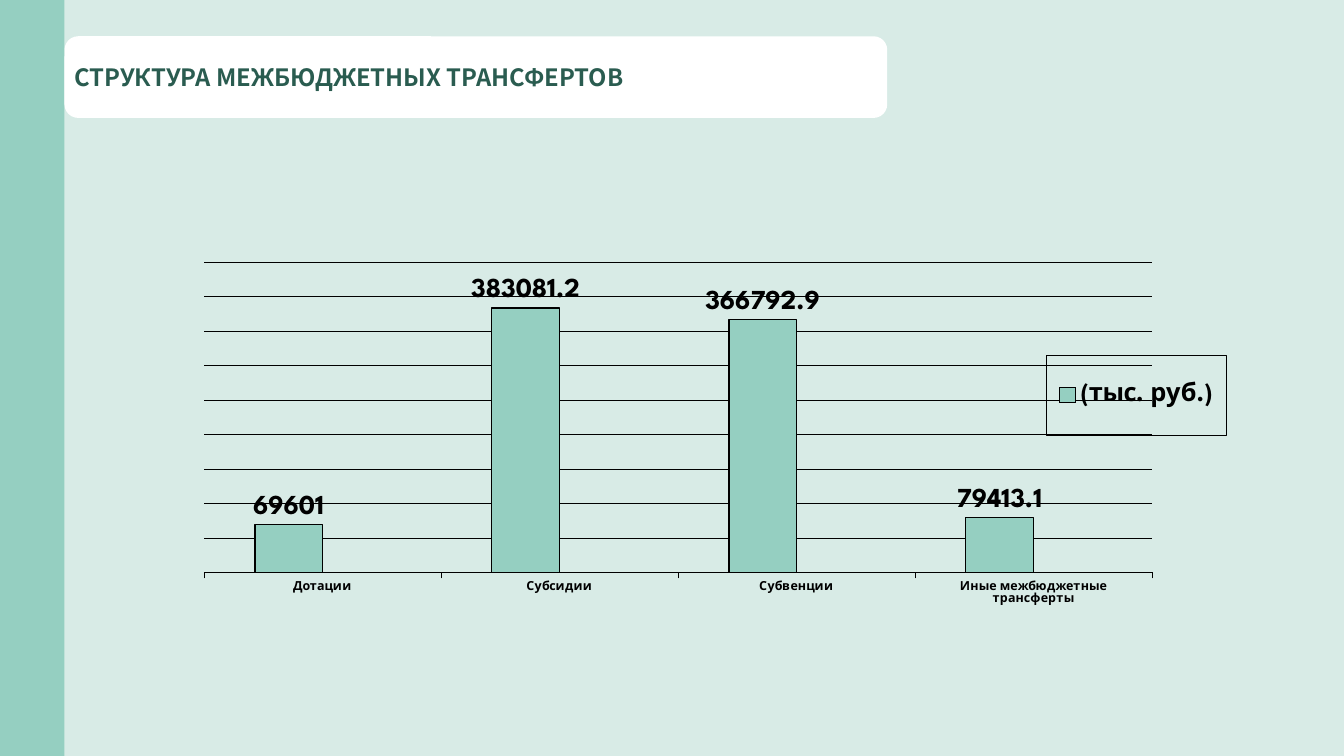
from lxml.etree import fromstring
from pptx import Presentation
from pptx.chart.data import CategoryChartData
from pptx.dml.color import RGBColor
from pptx.enum.chart import XL_CHART_TYPE, XL_LABEL_POSITION, XL_LEGEND_POSITION, XL_TICK_LABEL_POSITION, XL_TICK_MARK
from pptx.enum.shapes import MSO_SHAPE
from pptx.enum.text import MSO_ANCHOR, MSO_AUTO_SIZE, PP_ALIGN
from pptx.oxml.ns import nsdecls, qn
from pptx.util import Inches, Pt

COLORS = {"back": "D8EBE6", "panel": "FFFFFF", "mint": "95CFC1", "title": "2A5C50", "ink": "000000", "spare": "ED7D31"}
INK = RGBColor.from_string(COLORS["ink"])


def style(font, face, size, color):
    font.name = face
    font.size = Pt(size)
    font.bold = True
    font.color.rgb = RGBColor.from_string(COLORS[color])


def layout(x, y, w, h, target=""):
    return fromstring(
        f'<c:layout {nsdecls("c")}><c:manualLayout>{target}'
        '<c:xMode val="edge"/><c:yMode val="edge"/>'
        f'<c:x val="{x}"/><c:y val="{y}"/><c:w val="{w}"/><c:h val="{h}"/>'
        '</c:manualLayout></c:layout>')


deck = Presentation()
deck.slide_width = Inches(13.33)
deck.slide_height = Inches(7.5)
slide = deck.slides.add_slide(deck.slide_layouts[5])
slide.background.fill.solid()
slide.background.fill.fore_color.rgb = RGBColor.from_string(COLORS["back"])

for kind, color, box in (
    (MSO_SHAPE.RECTANGLE, "mint", (0, 0, 0.64, 7.5)),
    (MSO_SHAPE.ROUNDED_RECTANGLE, "panel", (0.64, 0.36, 8.16, 0.81)),
):
    panel = slide.shapes.add_shape(kind, *map(Inches, box))
    panel.shadow.inherit = False
    panel.fill.solid()
    panel.fill.fore_color.rgb = RGBColor.from_string(COLORS[color])
    panel.line.fill.background()

title = slide.shapes.title
title.left, title.top, title.width, title.height = map(Inches, (0.64, 0.52, 8, 0.49))
panel._element.addnext(title._element)
frame = title.text_frame
frame.word_wrap = True
frame.auto_size = MSO_AUTO_SIZE.NONE
frame.vertical_anchor = MSO_ANCHOR.MIDDLE
para = frame.paragraphs[0]
para.alignment = PP_ALIGN.LEFT
run = para.add_run()
run.text = "СТРУКТУРА МЕЖБЮДЖЕТНЫХ ТРАНСФЕРТОВ"
style(run.font, "Noto Sans CJK JP", 17, "title")

data = CategoryChartData()
data.categories = ["Дотации", "Субсидии", "Субвенции", "Иные межбюджетные трансферты"]
data.add_series("(тыс. руб.)", (69601, 383081.2, 366792.9, 79413.1))
data.add_series("Series 2", (None,) * 4)
chart = slide.shapes.add_chart(
    XL_CHART_TYPE.COLUMN_CLUSTERED, *map(Inches, (1.71, 2.36, 10.45, 4)), data).chart
chart.has_title = False
style(chart.font, "League Spartan", 19.6, "ink")

plot = chart.plots[0]
plot.gap_width = 150
plot.overlap = 0
plot.vary_by_categories = False
for series, color in zip(plot.series, ("mint", "spare")):
    series.format.fill.solid()
    series.format.fill.fore_color.rgb = RGBColor.from_string(COLORS[color])
    series.format.line.color.rgb = INK
    series.format.line.width = Pt(1.09)
labels = plot.series[0].data_labels
labels.show_value = True
labels.position = XL_LABEL_POSITION.OUTSIDE_END
style(labels.font, "League Spartan", 19.6, "ink")

names = chart.category_axis
names.tick_label_position = XL_TICK_LABEL_POSITION.LOW
names.major_tick_mark = XL_TICK_MARK.OUTSIDE
style(names.tick_labels.font, "League Spartan", 8.9, "ink")
scale = chart.value_axis
scale.visible = False
scale.minimum_scale = 0
scale.maximum_scale = 450000
scale.major_unit = 50000
scale.has_major_gridlines = True
for line in (names.format.line, scale.major_gridlines.format.line):
    line.color.rgb = INK
    line.width = Pt(0.27)

chart.has_legend = True
legend = chart.legend
legend.position = XL_LEGEND_POSITION.RIGHT
legend.include_in_layout = False
style(legend.font, "League Spartan", 18.1, "ink")

area = chart._chartSpace.chart.plotArea
key = legend._element
for node in (area, key):
    for old in node.findall(qn("c:layout")):
        node.remove(old)
area.insert(0, layout(0.03, 0.06, 0.9, 0.77, '<c:layoutTarget val="inner"/>'))
place = key.find(qn("c:legendPos"))
place.addnext(layout(0.83, 0.29, 0.17, 0.2))
place.addnext(fromstring(
    f'<c:legendEntry {nsdecls("c")}><c:idx val="1"/><c:delete val="1"/></c:legendEntry>'))
key.find(qn("c:txPr")).addprevious(fromstring(
    f'<c:spPr {nsdecls("c", "a")}><a:noFill/><a:ln w="{Pt(0.27)}"><a:solidFill>'
    f'<a:srgbClr val="{COLORS["ink"]}"/></a:solidFill></a:ln></c:spPr>'))

deck.save("out.pptx")
